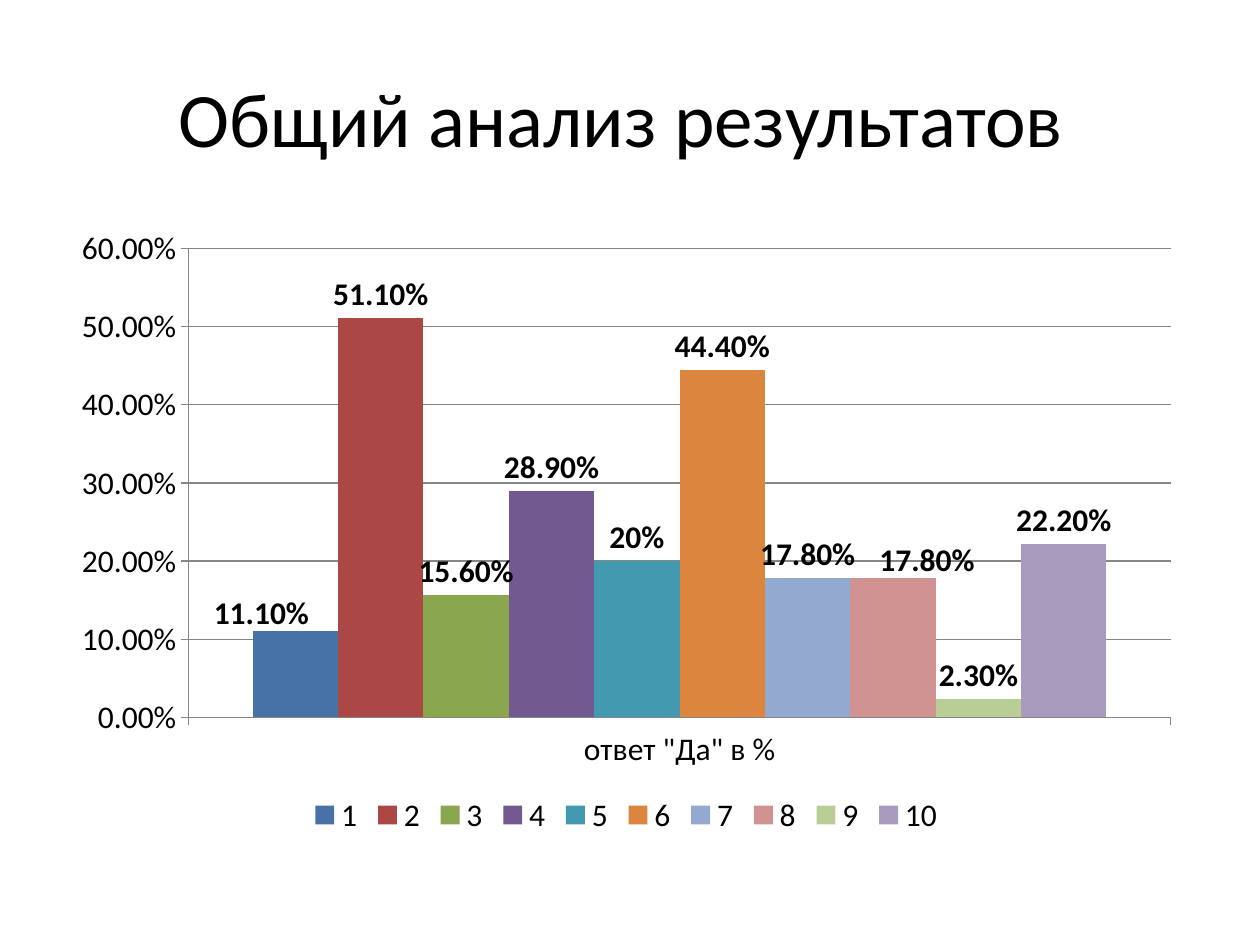
from dataclasses import dataclass

import pptx
import pptx.chart.data
import pptx.dml.color
import pptx.enum.chart
import pptx.enum.text
import pptx.oxml
import pptx.oxml.ns
import pptx.util

PX = 9144  # EMU


@dataclass(frozen=True)
class Theme:
    """Hold the colours and type sizes of the slide."""
    font: str = "Calibri"
    text: str = "000000"
    line: str = "868686"
    title_size: int = 44
    chart_size: int = 18
    bars: tuple = ("4672A8", "AB4744", "8AA64F", "725990", "4299B0",
                   "DC853E", "93A9D0", "D09392", "B9CD96", "A99BBE")


THEME = Theme()
SHARES = (0.111, 0.511, 0.156, 0.289, 0.2, 0.444, 0.178, 0.178, 0.023, 0.222)
LABEL_SHIFTS = {0: (-0.03, 0.01), 7: (0.03, 0.01)}


def px(*lengths):
    """Turn whole pixels into EMU lengths."""
    return [pptx.util.Emu(n * PX) for n in lengths]


def rgb(value):
    """Return a colour from its hex value."""
    return pptx.dml.color.RGBColor.from_string(value)


def style_font(font, size, bold=False):
    """Apply the theme typeface to a font."""
    font.name, font.size, font.bold = THEME.font, pptx.util.Pt(size), bold
    font.color.rgb = rgb(THEME.text)


def add_title(s, text, box):
    """Add the centred slide title."""
    tf = s.shapes.add_textbox(*px(*box)).text_frame
    tf.word_wrap = True
    tf.vertical_anchor = pptx.enum.text.MSO_ANCHOR.MIDDLE
    p = tf.paragraphs[0]
    p.text = text
    p.alignment = pptx.enum.text.PP_ALIGN.CENTER
    style_font(p.runs[0].font, THEME.title_size)


def shift_label(label, dx, dy):
    """Move one data label by fractions of the chart size."""
    style_font(label.font, THEME.chart_size, bold=True)
    label.position = pptx.enum.chart.XL_LABEL_POSITION.OUTSIDE_END
    layout = pptx.oxml.parse_xml(
        f'<c:layout {pptx.oxml.ns.nsdecls("c")}><c:manualLayout>'
        f'<c:x val="{dx}"/><c:y val="{dy}"/></c:manualLayout></c:layout>')
    label.font._element.getparent().getparent().getparent()
    d_lbl = label._get_or_add_dLbl()
    d_lbl.insert(1, layout)


def style_series(series, color, number_format):
    """Colour one series and show its values in bold."""
    series.format.fill.solid()
    series.format.fill.fore_color.rgb = rgb(color)
    labels = series.data_labels
    labels.show_value = True
    labels.number_format = number_format
    labels.number_format_is_linked = False
    labels.position = pptx.enum.chart.XL_LABEL_POSITION.OUTSIDE_END
    style_font(labels.font, THEME.chart_size, bold=True)


def style_axes(chart):
    """Set the scale, ticks and lines of both axes."""
    value_axis = chart.value_axis
    value_axis.minimum_scale, value_axis.maximum_scale = 0, 0.6
    value_axis.major_unit = 0.1
    value_axis.tick_labels.number_format = "0.00%"
    value_axis.tick_labels.number_format_is_linked = False
    value_axis.has_major_gridlines = True
    for part in (value_axis, chart.category_axis, value_axis.major_gridlines):
        part.format.line.color.rgb = rgb(THEME.line)
        part.format.line.width = pptx.util.Pt(0.75)


def add_share_chart(s, box):
    """Add the column chart of shares by question."""
    data = pptx.chart.data.CategoryChartData(number_format="0.00%")
    data.categories = ['ответ "Да" в %']
    formats = ["0%" if share == 0.2 else "0.00%" for share in SHARES]
    for number, (share, fmt) in enumerate(zip(SHARES, formats), 1):
        data.add_series(str(number), [share], fmt)
    kind = pptx.enum.chart.XL_CHART_TYPE.COLUMN_CLUSTERED
    chart = s.shapes.add_chart(kind, *px(*box), data).chart
    style_font(chart.font, THEME.chart_size)
    chart.has_title = False
    chart.has_legend = True
    chart.legend.position = pptx.enum.chart.XL_LEGEND_POSITION.BOTTOM
    chart.legend.include_in_layout = False
    style_axes(chart)
    plot = chart.plots[0]
    plot.vary_by_categories = False
    plot.gap_width, plot.overlap = 150, 0
    for series, color, fmt in zip(plot.series, THEME.bars, formats):
        style_series(series, color, fmt)
    for index, shift in LABEL_SHIFTS.items():
        shift_label(plot.series[index].points[0].data_label, *shift)


def main():
    """Build the slide and save it."""
    prs = pptx.Presentation()
    prs.slide_width, prs.slide_height = px(1000, 750)
    s = prs.slides.add_slide(prs.slide_layouts[6])
    add_title(s, "Общий анализ результатов ", (50, 30, 900, 125))
    add_share_chart(s, (47, 172, 900, 495))
    prs.save("out.pptx")


if __name__ == "__main__":
    main()
